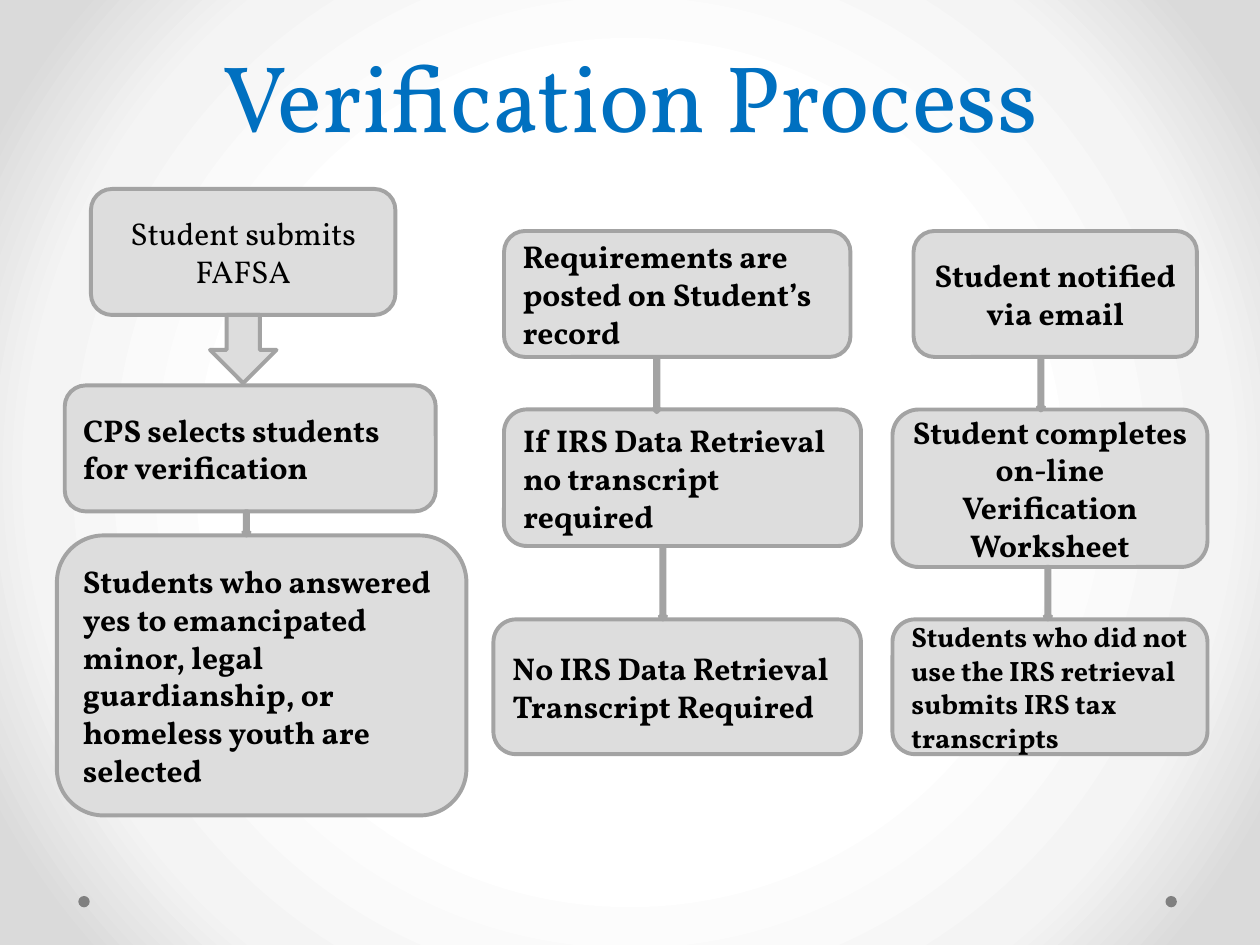
import pptx
import pptx.dml.color
import pptx.enum.shapes
import pptx.enum.text
import pptx.oxml
import pptx.oxml.ns
import pptx.util

Pt = pptx.util.Pt
SHAPE = pptx.enum.shapes.MSO_SHAPE
ALIGN = pptx.enum.text.PP_ALIGN
ANCHOR = pptx.enum.text.MSO_ANCHOR


def colour(hex_value):
    return pptx.dml.color.RGBColor.from_string(hex_value)


def assign(target, values):
    for name, value in values.items():
        setattr(target, name, value)


class Flowchart:
    font = "Vollkorn"
    fill = "DDDDDD"
    outline = "A3A3A3"
    ink = "000000"

    def __init__(self, slide):
        self.slide = slide

    def background(self, stops):
        fill = self.slide.background.fill
        fill.gradient()
        gradient = self.slide.element.find(".//" + pptx.oxml.ns.qn("a:gradFill"))
        stop_xml = "".join(
            f'<a:gs pos="{position * 1000}"><a:srgbClr val="{shade}"/></a:gs>'
            for position, shade in stops
        )
        radial = pptx.oxml.parse_xml(
            f'<a:gradFill {pptx.oxml.ns.nsdecls("a")} rotWithShape="1">'
            f'<a:gsLst>{stop_xml}</a:gsLst><a:path path="circle">'
            '<a:fillToRect l="50000" t="50000" r="50000" b="50000"/>'
            "</a:path></a:gradFill>"
        )
        gradient.getparent().replace(gradient, radial)

    def label(self, frame, text, size, hue, bold, align, anchor):
        assign(frame, {"word_wrap": True, "vertical_anchor": anchor})
        paragraph = frame.paragraphs[0]
        paragraph.text = text
        paragraph.alignment = align
        assign(paragraph.font, {"name": self.font, "size": Pt(size), "bold": bold})
        paragraph.font.color.rgb = colour(hue)
        return paragraph

    def title(self, text, bounds):
        heading = self.slide.shapes.add_textbox(*map(Pt, bounds))
        line = self.label(heading.text_frame, text, 54, "0070C0", False,
                          ALIGN.CENTER, ANCHOR.BOTTOM)
        line.line_spacing = Pt(58)

    def shape(self, kind, bounds, fill, outline=None):
        item = self.slide.shapes.add_shape(kind, *map(Pt, bounds))
        item.shadow.inherit = False
        item.fill.solid()
        item.fill.fore_color.rgb = colour(fill)
        if outline:
            item.line.color.rgb = colour(outline)
            item.line.width = Pt(2.25)
        else:
            item.line.fill.background()
        return item

    def dot(self, left):
        self.shape(SHAPE.OVAL, (left, 512, 6.5, 6.5), "808080")

    def step(self, text, bounds, align=ALIGN.LEFT, size=18, bold=True):
        box = self.shape(SHAPE.FLOWCHART_ALTERNATE_PROCESS, bounds,
                         self.fill, self.outline)
        self.label(box.text_frame, text, size, self.ink, bold, align, ANCHOR.MIDDLE)

    def arrow(self, left, top, height, width=3.6):
        self.shape(SHAPE.DOWN_ARROW, (left, top, width, height),
                   self.fill, self.outline)


def main():
    deck = pptx.Presentation()
    assign(deck, {"slide_width": Pt(720), "slide_height": Pt(540)})
    chart = Flowchart(deck.slides.add_slide(deck.slide_layouts[6]))

    chart.background([(50, "FFFFFF"), (76, "F4F4F4"), (92, "DADADA")])
    for left in (666, 44.75):
        chart.dot(left)
    chart.title("Verification Process", (36, 0, 648, 90))

    chart.step("Student submits FAFSA", (52, 108, 174, 72), ALIGN.CENTER, bold=False)
    chart.step("CPS selects students for verification", (37, 220.25, 212, 72))
    chart.step("Students who answered yes to emancipated minor, legal guardianship, "
               "or homeless youth are selected", (32.5, 306, 234, 160))

    chart.step("Requirements are posted on Student’s record", (288, 132, 198, 72))
    chart.step("If IRS Data Retrieval no transcript required", (288, 234, 204, 78))
    chart.step("No IRS Data Retrieval Transcript Required", (282, 354, 210, 77))

    chart.step("Student notified via email", (522, 132, 162, 72), ALIGN.CENTER)
    chart.step("Student completes on-line Verification Worksheet",
               (510, 234, 180, 90), ALIGN.CENTER)
    chart.step("Students who did not use the IRS retrieval submits IRS tax transcripts",
               (510, 354, 180, 77), size=16)

    chart.arrow(120, 180, 39, width=38)
    for left, top, height in (
        (139, 292.25, 13.75),
        (373.5, 204.5, 31),
        (377, 312, 42),
        (593, 205, 29.5),
        (597, 324, 30),
    ):
        chart.arrow(left, top, height)

    deck.save("out.pptx")


if __name__ == "__main__":
    main()
